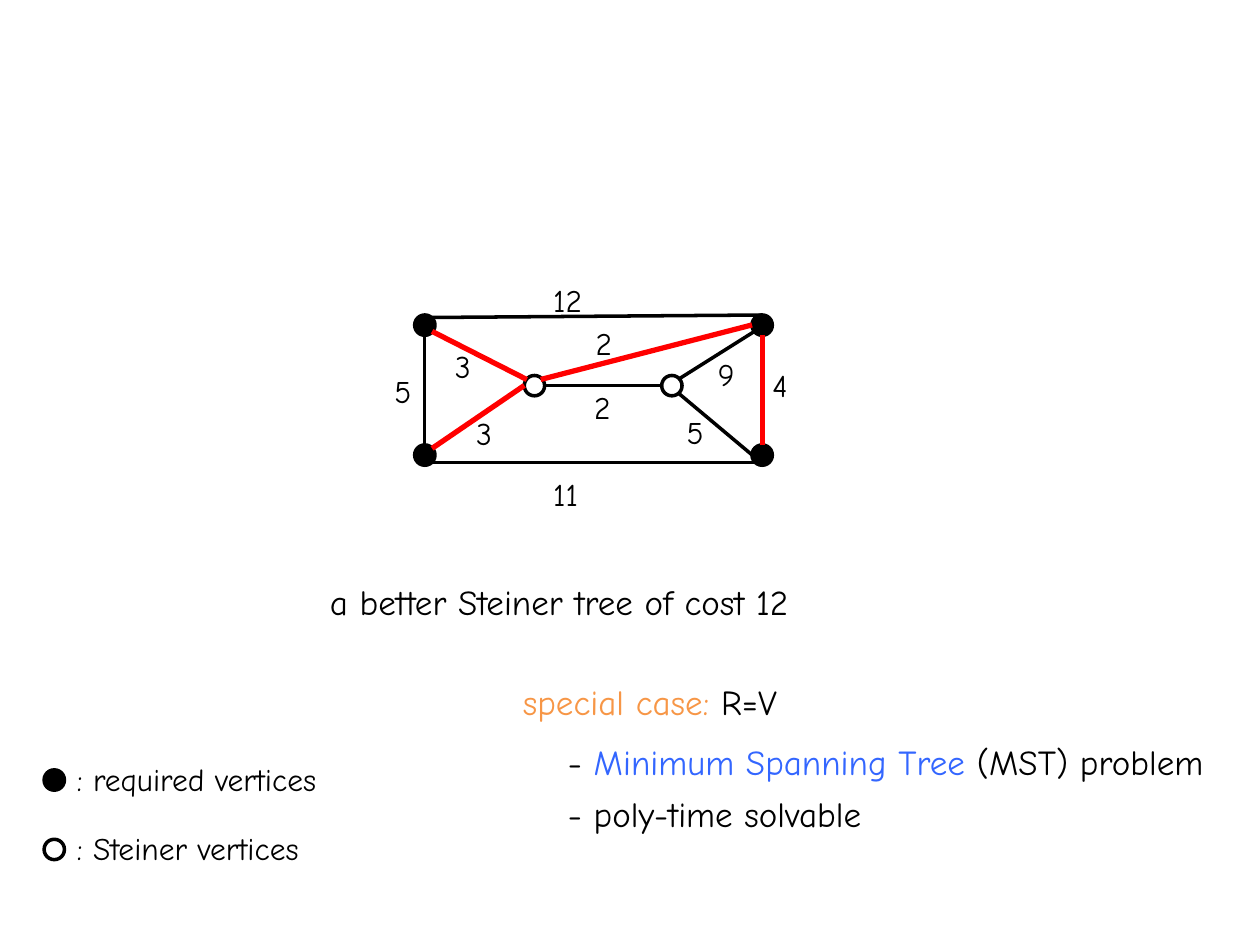
from dataclasses import dataclass
from itertools import product

from lxml.etree import SubElement
from pptx import Presentation
from pptx.dml.color import RGBColor
from pptx.enum.shapes import MSO_CONNECTOR, MSO_SHAPE
from pptx.enum.text import MSO_AUTO_SIZE
from pptx.oxml.ns import qn
from pptx.util import Cm, Pt


@dataclass(frozen=True)
class Theme:
    font: str = "Comic Neue"
    ink: str = "000000"
    paper: str = "FFFFFF"
    tree: str = "FF0000"
    heading: str = "F79646"
    term: str = "3366FF"
    label_size: int = 18
    body_size: int = 20
    edge_width: int = 2
    tree_width: int = 3


@dataclass(frozen=True)
class Edge:
    start: tuple
    end: tuple
    weight: str
    label_at: tuple
    label_width: float = 0.94
    in_tree: bool = False


THEME = Theme()
VERTEX_SIZE = 0.41
LABEL_HEIGHT = 1.02
BODY_HEIGHT = 1.12

REQUIRED = list(product((8.36, 15.16), (6.35, 8.97)))
STEINER = [(10.57, 7.57), (13.34, 7.57)]

EDGES = [
    Edge((8.71, 6.68), (10.62, 7.65), "3", (8.92, 6.88), in_tree=True),
    Edge((8.71, 9.04), (10.57, 7.77), "3", (9.35, 8.23), in_tree=True),
    Edge((10.97, 7.77), (13.34, 7.77), "2", (11.73, 7.7)),
    Edge((13.67, 7.65), (15.21, 6.68), "9", (14.22, 7.04)),
    Edge((13.67, 7.92), (15.16, 9.17), "5", (13.59, 8.2)),
    Edge((10.9, 7.65), (15.16, 6.55), "2", (11.76, 6.4), in_tree=True),
    Edge((8.71, 6.4), (15.37, 6.35), "12", (10.9, 5.54), 1.37),
    Edge((8.56, 6.76), (8.56, 8.97), "5", (7.7, 7.37)),
    Edge((8.71, 9.32), (15.21, 9.32), "11", (10.9, 9.45), 1.37),
    Edge((15.37, 6.76), (15.37, 8.97), "4", (15.32, 7.26), 1.37, True),
]

LEGEND = [
    (": required vertices", THEME.ink, 6.07),
    (": Steiner vertices", THEME.paper, 5.79),
]

STATEMENTS = [
    ((6.4, 11.58), 11.28, [("a better Steiner tree of cost 12", THEME.ink)]),
    ((10.29, 13.59), 6.15, [("special case: ", THEME.heading), ("R=V", THEME.ink)]),
    ((11.2, 14.81), 14.1, [
        ("- ", THEME.ink),
        ("Minimum Spanning Tree ", THEME.term),
        ("(MST) problem", THEME.ink),
    ]),
    ((11.2, 15.85), 6.99, [("- poly-time solvable", THEME.ink)]),
]


def add_text(slide, parts, at, width, height=LABEL_HEIGHT, size=THEME.label_size, wrap=False):
    box = slide.shapes.add_textbox(*map(Cm, (*at, width, height)))
    frame = box.text_frame
    frame.word_wrap = wrap
    frame.auto_size = MSO_AUTO_SIZE.SHAPE_TO_FIT_TEXT
    for words, color in parts:
        run = frame.paragraphs[0].add_run()
        run.text = words
        run.font.name = THEME.font
        run.font.size = Pt(size)
        run.font.color.rgb = RGBColor.from_string(color)


def add_vertex(slide, at, fill):
    vertex = slide.shapes.add_shape(
        MSO_SHAPE.OVAL, *map(Cm, (*at, VERTEX_SIZE, VERTEX_SIZE)))
    vertex.shadow.inherit = False
    vertex.fill.solid()
    vertex.fill.fore_color.rgb = RGBColor.from_string(fill)
    vertex.line.color.rgb = RGBColor.from_string(THEME.ink)
    vertex.line.width = Pt(THEME.edge_width)


def add_edge(slide, edge):
    link = slide.shapes.add_connector(
        MSO_CONNECTOR.STRAIGHT, *map(Cm, (*edge.start, *edge.end)))
    link.line.color.rgb = RGBColor.from_string(THEME.tree if edge.in_tree else THEME.ink)
    link.line.width = Pt(THEME.tree_width if edge.in_tree else THEME.edge_width)
    SubElement(link._element.spPr, qn("a:effectLst"))


def add_legend(slide):
    for row, (meaning, fill, width) in enumerate(LEGEND):
        offset = 1.4 * row
        add_vertex(slide, (0.89, 15.52 + offset), fill)
        add_text(slide, [(meaning, THEME.ink)], (1.3, 15.19 + offset), width)


def add_graph(slide):
    for vertices, fill in ((REQUIRED, THEME.ink), (STEINER, THEME.paper)):
        for at in vertices:
            add_vertex(slide, at, fill)
    for edge in EDGES:
        add_edge(slide, edge)
    for edge in EDGES:
        add_text(slide, [(edge.weight, THEME.ink)], edge.label_at, edge.label_width, wrap=True)


def main():
    deck = Presentation()
    deck.slide_width, deck.slide_height = Cm(25.4), Cm(19.05)
    slide = deck.slides.add_slide(deck.slide_layouts[6])
    add_legend(slide)
    add_graph(slide)
    for at, width, parts in STATEMENTS:
        add_text(slide, parts, at, width, BODY_HEIGHT, THEME.body_size)
    deck.save("out.pptx")


if __name__ == "__main__":
    main()
